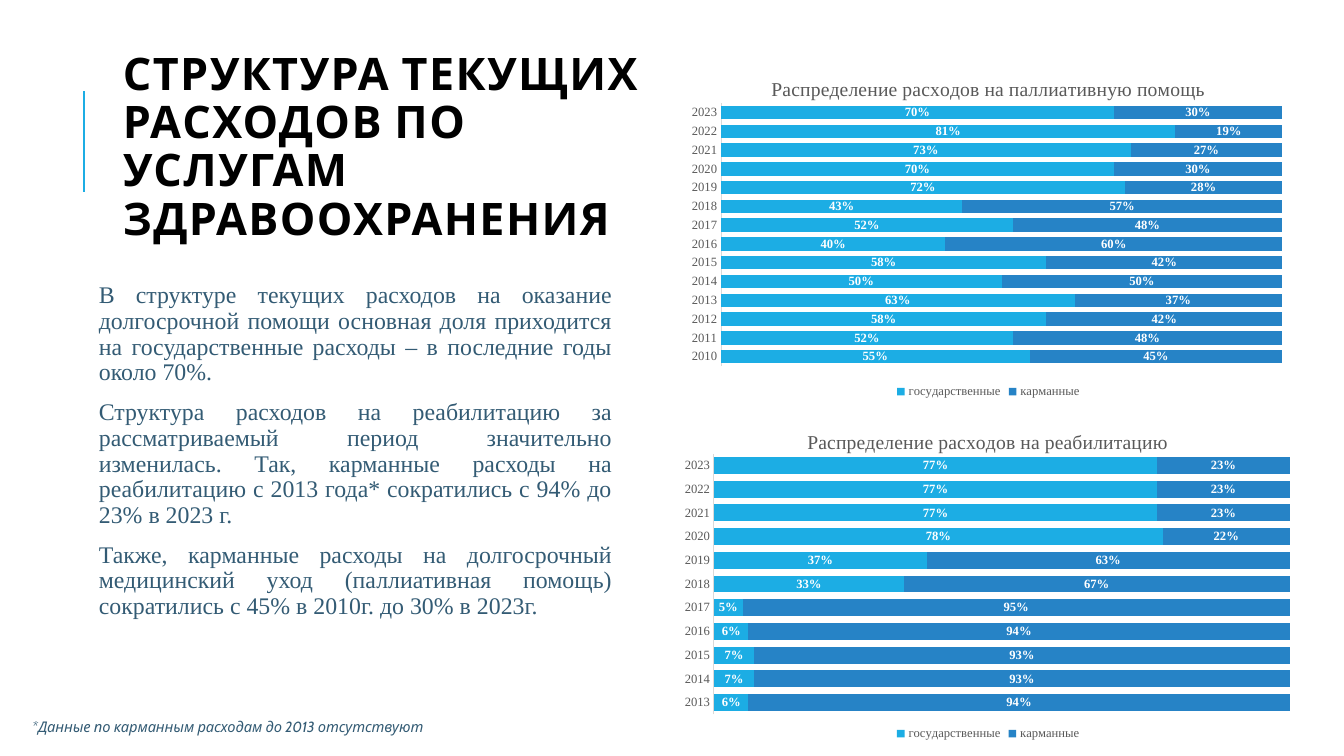
from dataclasses import dataclass

from lxml import etree
from pptx import Presentation
from pptx import util as u
from pptx.chart.data import CategoryChartData
from pptx.dml.color import RGBColor
from pptx.enum import chart as charts, shapes, text
from pptx.oxml import ns

SKY = RGBColor(0x1C, 0xAD, 0xE4)
BLUE = RGBColor(0x26, 0x83, 0xC6)
SLATE = RGBColor(0x33, 0x5B, 0x74)
GREY = RGBColor(0x59, 0x59, 0x59)
PALE = RGBColor(0xD9, 0xD9, 0xD9)
BLACK = RGBColor(0, 0, 0)
WHITE = RGBColor(255, 255, 255)
HEADING_FONT = "Cabin"
TEXT_FONT = "Times New Roman"


@dataclass
class Box:
    left: float
    top: float
    width: float
    height: float

    def lengths(self) -> list:
        return [u.Pt(v) for v in (self.left, self.top, self.width, self.height)]


@dataclass
class ExpenseChart:
    title: str
    box: Box
    first_year: int
    state_shares: list
    title_percent: dict
    plot_percent: dict


TITLE = "СТРУКТУРА ТЕКУЩИХ РАСХОДОВ ПО УСЛУГАМ ЗДРАВООХРАНЕНИЯ"
FINDINGS = [
    "В структуре текущих расходов на оказание долгосрочной помощи основная доля "
    "приходится на государственные расходы – в последние годы около 70%.",
    "Структура расходов на реабилитацию за рассматриваемый период значительно "
    "изменилась. Так, карманные расходы на реабилитацию с 2013 года* сократились "
    "с 94% до 23% в 2023 г.",
    "Также, карманные расходы на долгосрочный медицинский уход (паллиативная помощь) "
    "сократились с 45% в 2010г. до 30% в 2023г.",
]
FOOTNOTE = "*Данные по карманным расходам до 2013 отсутствуют"

EXPENSE_CHARTS = [
    ExpenseChart(
        "Распределение расходов на паллиативную помощь",
        Box(486, 43.9, 440, 244), 2010,
        [0.55, 0.52, 0.58, 0.63, 0.5, 0.58, 0.4, 0.52, 0.43, 0.72, 0.7, 0.73, 0.81, 0.7],
        {"x": 14.2, "y": 3.4}, {"x": 6.6, "y": 12.2, "w": 91.1, "h": 77}),
    ExpenseChart(
        "Распределение расходов на реабилитацию",
        Box(480.2, 295.9, 451.4, 236.2), 2013,
        [0.06, 0.07, 0.07, 0.06, 0.05, 0.33, 0.37, 0.78, 0.77, 0.77, 0.77],
        {"x": 20.8, "y": 3.4}, {"x": 6.6, "y": 11.9, "w": 91.1, "h": 78.9}),
]

TITLE_FONT = {"name": HEADING_FONT, "size": u.Pt(32), "bold": True}
BODY_FONT = {"name": TEXT_FONT, "size": u.Pt(17)}
FOOTNOTE_FONT = {"name": HEADING_FONT, "size": u.Pt(10.5), "italic": True}
CHART_FONT = {"name": TEXT_FONT, "size": u.Pt(10)}
CHART_TITLE_FONT = {"name": TEXT_FONT, "size": u.Pt(14), "bold": False}
AXIS_FONT = {"name": TEXT_FONT, "size": u.Pt(9)}
LABEL_FONT = {"name": TEXT_FONT, "size": u.Pt(9), "bold": True}
TITLE_PARAGRAPH = {"alignment": text.PP_ALIGN.LEFT, "line_spacing": 0.9}
BODY_PARAGRAPH = {"alignment": text.PP_ALIGN.JUSTIFY, "line_spacing": 0.9,
                  "space_before": u.Pt(0), "space_after": u.Pt(10)}
FRAME = {"word_wrap": True, "auto_size": text.MSO_AUTO_SIZE.NONE}
MARGINS = {f"margin_{side}": u.Pt(3.6) for side in ("left", "top", "right", "bottom")}


def set_format(target, values: dict) -> None:
    for name, value in values.items():
        setattr(target, name, value)


def set_font(font, values: dict, color: RGBColor) -> None:
    set_format(font, values)
    font.color.rgb = color


def write_text(shape, lines: list, box: Box, frame: dict, paragraph_format: dict,
               font: dict, color: RGBColor) -> None:
    set_format(shape, dict(zip(("left", "top", "width", "height"), box.lengths())))
    set_format(shape.text_frame, frame)
    shape.text_frame.text = "\n".join(lines)
    for paragraph in shape.text_frame.paragraphs:
        set_format(paragraph, paragraph_format)
        set_font(paragraph.runs[0].font, font, color)


def remove_bullets(shape) -> None:
    for paragraph in shape.text_frame.paragraphs:
        properties = paragraph._p.get_or_add_pPr()
        properties.set("marL", "0")
        properties.set("indent", "0")
        etree.SubElement(properties, ns.qn("a:buNone"))


def place_chart_part(parent, percent: dict, inner: bool) -> None:
    for old_layout in parent.findall(ns.qn("c:layout")):
        parent.remove(old_layout)
    layout = etree.Element(ns.qn("c:layout"))
    manual = etree.SubElement(layout, ns.qn("c:manualLayout"))
    settings = {"layoutTarget": "inner"} if inner else {}
    settings.update(xMode="edge", yMode="edge")
    settings.update({name: round(value / 100, 3) for name, value in percent.items()})
    for name, value in settings.items():
        etree.SubElement(manual, ns.qn(f"c:{name}")).set("val", str(value))
    title_text = parent.find(ns.qn("c:tx"))
    parent.insert(0 if title_text is None else 1, layout)


def add_expense_chart(slide, expense: ExpenseChart) -> None:
    shares = expense.state_shares
    data = CategoryChartData(number_format="0%")
    data.categories = [str(expense.first_year + i) for i in range(len(shares))]
    data.add_series("государственные", shares)
    data.add_series("карманные", [round(1 - share, 2) for share in shares])
    chart = slide.shapes.add_chart(
        charts.XL_CHART_TYPE.BAR_STACKED_100, *expense.box.lengths(), data).chart
    set_font(chart.font, CHART_FONT, BLACK)

    chart.has_title = True
    chart.chart_title.text_frame.text = expense.title
    title_run = chart.chart_title.text_frame.paragraphs[0].runs[0]
    set_font(title_run.font, CHART_TITLE_FONT, GREY)
    chart.chart_title.include_in_layout = False

    chart.has_legend = True
    set_format(chart.legend, {"position": charts.XL_LEGEND_POSITION.BOTTOM,
                              "include_in_layout": False})
    set_font(chart.legend.font, AXIS_FONT, GREY)

    set_format(chart.value_axis, {"visible": False, "has_major_gridlines": False,
                                  "minimum_scale": 0, "maximum_scale": 1})
    years = chart.category_axis
    set_format(years, {"major_tick_mark": charts.XL_TICK_MARK.NONE,
                       "has_major_gridlines": False})
    set_font(years.tick_labels.font, AXIS_FONT, GREY)
    years.format.line.color.rgb = PALE
    years.format.line.width = u.Pt(0.75)

    plot = chart.plots[0]
    set_format(plot, {"gap_width": 40, "overlap": 100, "vary_by_categories": False})
    for series, color in zip(plot.series, (SKY, BLUE)):
        series.format.fill.solid()
        series.format.fill.fore_color.rgb = color
        labels = series.data_labels
        set_format(labels, {"show_value": True, "number_format": "0%",
                            "number_format_is_linked": False,
                            "position": charts.XL_LABEL_POSITION.CENTER})
        set_font(labels.font, LABEL_FONT, WHITE)

    place_chart_part(chart.element.xpath("c:chart/c:title")[0], expense.title_percent, False)
    place_chart_part(chart.element.xpath("c:chart/c:plotArea")[0], expense.plot_percent, True)


def add_accent_line(slide) -> None:
    line = slide.shapes.add_connector(
        shapes.MSO_CONNECTOR.STRAIGHT, u.Pt(60), u.Pt(136.8), u.Pt(60), u.Pt(64.8))
    line.line.color.rgb = SKY
    line.line.width = u.Pt(1.5)
    etree.SubElement(line._element.spPr, ns.qn("a:effectLst"))


def main() -> None:
    presentation = Presentation()
    set_format(presentation, {"slide_width": u.Pt(960), "slide_height": u.Pt(540)})
    slide = presentation.slides.add_slide(presentation.slide_layouts[1])
    add_accent_line(slide)

    title = slide.shapes.title
    write_text(title, [TITLE], Box(80.6, 36, 399.6, 139.7),
               {**FRAME, "vertical_anchor": text.MSO_ANCHOR.MIDDLE},
               TITLE_PARAGRAPH, TITLE_FONT, BLACK)
    title.text_frame.paragraphs[0].runs[0].font._element.set("spc", "100")

    body = slide.placeholders[1]
    write_text(body, FINDINGS, Box(67, 198.7, 373.7, 260.6), {**FRAME, **MARGINS},
               BODY_PARAGRAPH, BODY_FONT, SLATE)
    remove_bullets(body)

    footnote_box = Box(19.4, 510.5, 348.5, 21.6)
    footnote = slide.shapes.add_textbox(*footnote_box.lengths())
    write_text(footnote, [FOOTNOTE], footnote_box, {**FRAME, **MARGINS},
               BODY_PARAGRAPH, FOOTNOTE_FONT, SLATE)

    for expense in EXPENSE_CHARTS:
        add_expense_chart(slide, expense)
    presentation.save("out.pptx")


if __name__ == "__main__":
    main()
